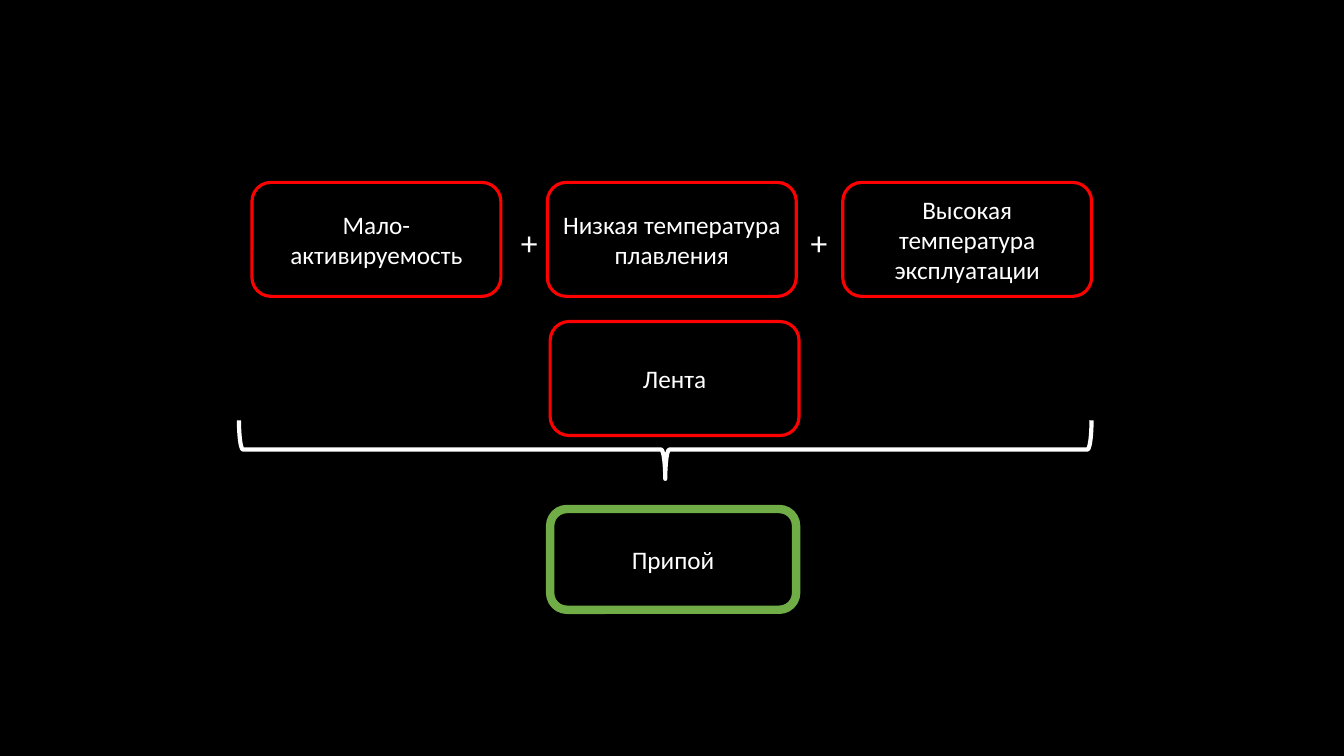
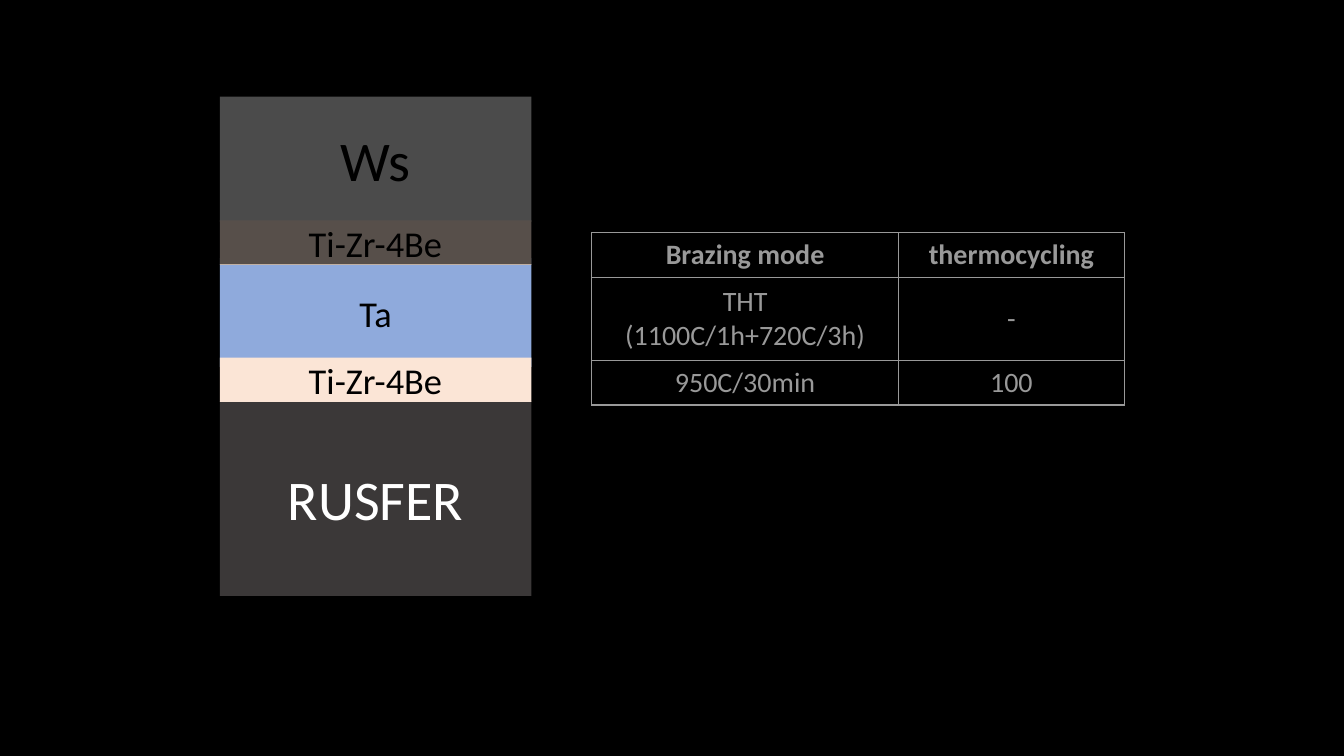
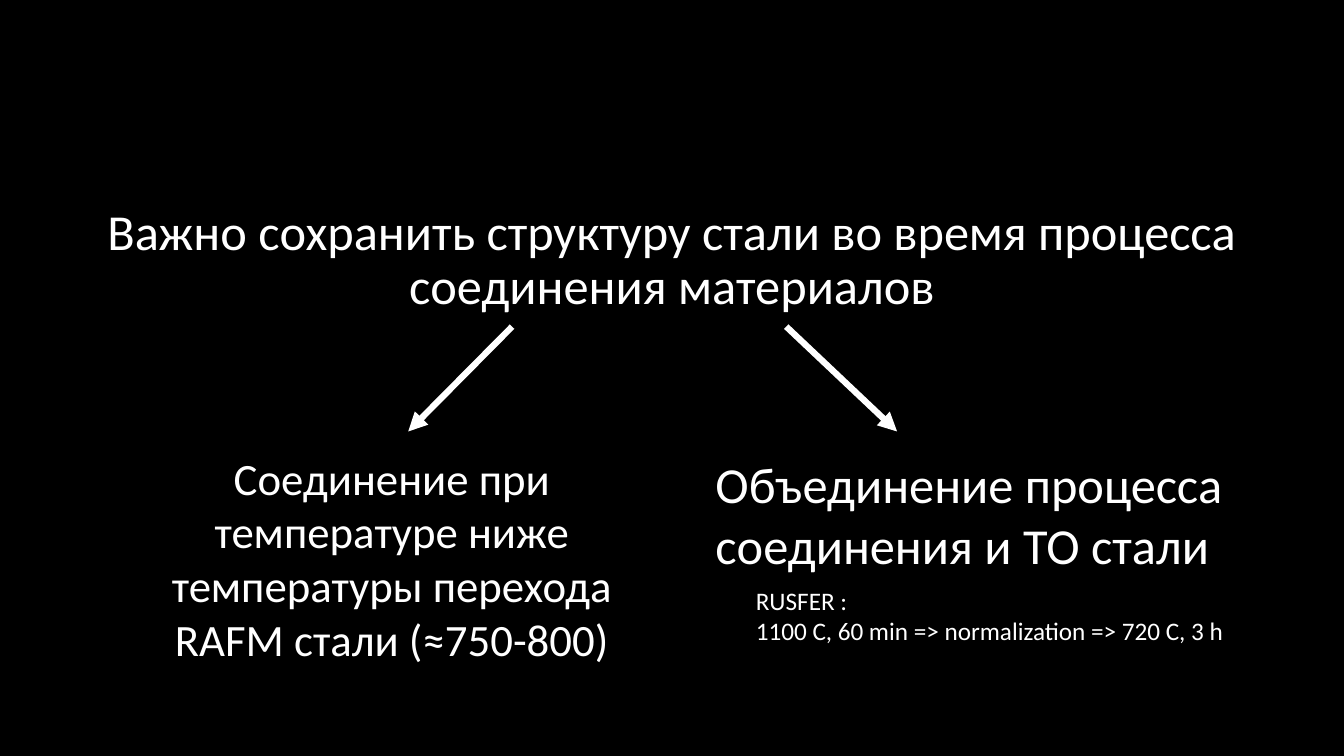
from lxml import etree
from pptx import Presentation
from pptx.dml.color import RGBColor
from pptx.enum.shapes import MSO_CONNECTOR, MSO_SHAPE
from pptx.enum.text import MSO_ANCHOR, MSO_AUTO_SIZE, PP_ALIGN
from pptx.oxml.ns import qn
from pptx.util import Pt

FONT = "Calibri"
COLORS = {
    "black": "000000", "white": "FFFFFF", "red": "FF0000", "green": "70AD47",
    "tungsten": "D9D9D9", "tantalum": "8FAADC", "steel": "3B3838", "braze": "FBE5D6",
}

# Slide 1: requirements for the solder
REQUIREMENTS = ["Мало-активируемость", "Низкая температура плавления",
                "Высокая температура эксплуатации"]
REQ_LEFT, REQ_TOP, REQ_W, REQ_H, REQ_PITCH = 180, 130.3, 177.8, 81.4, 211
PLUS_CENTERS = [378, 585]
# text, place, line colour, line width
RESULTS = [
    ("Припой", (393, 363.6, 175.7, 72), "green", 6),
    ("Лента", (393, 229.7, REQ_W, REQ_H), "red", 2.25),
]

# Slide 2: layer stack (text, top, height, fill, text colour, size) and modes
STACK_LEFT, STACK_W = 157, 222.5
LAYERS = [
    ("Ws", 69, 89.3, "tungsten", "black", 40),
    ("Ta", 184.3, 77.8, "tantalum", "black", 26),
    ("RUSFER", 286.6, 139, "steel", "white", 40),
    ("Ti-Zr-4Be", 157.5, 31.7, "braze", "black", 26),
    ("Ti-Zr-4Be", 255.5, 31.7, "braze", "black", 26),
]
MODES = [
    ("Brazing mode", "thermocycling"),
    ("THT (1100C/1h+720C/3h)", "-"),
    ("950C/30min", "100"),
]
MODE_COLS, MODE_ROWS = [219.4, 161], [32, 59, 32]
# place, opacity in percent
SHADES = [((127.5, 5.8, 265, 183), 65), ((406.8, 130.3, 410.4, 193), 40)]

# Slide 3: two ways to join
HEADLINE = "Важно сохранить структуру стали во время процесса соединения материалов"
ARROW_TOP, ARROW_BOTTOM = 233.3, 308.2
ARROWS = [(365.8, 291.6), (561.6, 640.8)]
# lines, place, size, alignment, wrap
OPTIONS = [
    (["Объединение процесса соединения и ТО стали"],
     (504, 320.4, 393.8, 94.3), 36, PP_ALIGN.LEFT, True),
    (["Соединение при температуре ниже температуры перехода RAFM стали (≈750-800)"],
     (90, 318.2, 380, 162.7), 32, PP_ALIGN.CENTER, True),
    (["RUSFER :", "1100 C, 60 min => normalization => 720 C, 3 h"],
     (532.8, 414.7, 354.2, 51), 18, PP_ALIGN.LEFT, False),
]


def rgb(name):
    return RGBColor.from_string(COLORS[name])


def points(place):
    return [Pt(v) for v in place]


def write(tf, lines, size, color="white", align=PP_ALIGN.CENTER, bold=False):
    tf.text = "\n".join(lines)
    for p in tf.paragraphs:
        p.alignment = align
        for r in p.runs:
            r.font.name, r.font.size, r.font.bold = FONT, Pt(size), bold
            r.font.color.rgb = rgb(color)


def add_box(slide, shape, place, fill=None, line=None, width=1):
    sp = slide.shapes.add_shape(shape, *points(place))
    sp.shadow.inherit = False
    if fill:
        sp.fill.solid()
        sp.fill.fore_color.rgb = rgb(fill)
    else:
        sp.fill.background()
    if line:
        sp.line.color.rgb = rgb(line)
        sp.line.width = Pt(width)
    else:
        sp.line.fill.background()
    sp.text_frame.vertical_anchor = MSO_ANCHOR.MIDDLE
    return sp


def add_text(slide, lines, place, size, align, wrap):
    tf = slide.shapes.add_textbox(*points(place)).text_frame
    tf.word_wrap = wrap
    write(tf, lines, size, align=align)


def add_arrow(slide, start, end):
    ln = slide.shapes.add_connector(MSO_CONNECTOR.STRAIGHT, *points(start + end))
    ln.line.color.rgb = rgb("white")
    ln.line.width = Pt(4.5)
    etree.SubElement(ln.line._get_or_add_ln(), qn("a:tailEnd"), type="triangle")
    etree.SubElement(ln._element.spPr, qn("a:effectLst"))


def set_opacity(sp, percent):
    color = sp.fill._xPr.find(qn("a:solidFill"))[0]
    etree.SubElement(color, qn("a:alpha"), val=str(percent * 1000))


def set_borders(cell, color, width):
    tc_pr = cell._tc.get_or_add_tcPr()
    for i, side in enumerate(("lnL", "lnR", "lnT", "lnB")):
        ln = etree.Element(qn("a:" + side), w=str(Pt(width)))
        fill = etree.SubElement(ln, qn("a:solidFill"))
        etree.SubElement(fill, qn("a:srgbClr"), val=COLORS[color])
        tc_pr.insert(i, ln)


def build_requirements(slide):
    boxes = [(text, (REQ_LEFT + i * REQ_PITCH, REQ_TOP, REQ_W, REQ_H), "red", 2.25)
             for i, text in enumerate(REQUIREMENTS)]
    for text, place, line, width in boxes + RESULTS:
        sp = add_box(slide, MSO_SHAPE.ROUNDED_RECTANGLE, place, line=line, width=width)
        write(sp.text_frame, [text], 18)
    for x in PLUS_CENTERS:
        add_text(slide, ["+"], (x - 15, 154.8, 30, 36), 24, PP_ALIGN.CENTER, False)
    brace = add_box(slide, MSO_SHAPE.LEFT_BRACE, (454.3, 16.6, 41.8, 609),
                    line="white", width=3)
    brace.rotation = 270
    brace.adjustments[0], brace.adjustments[1] = 0.07, 0.5


def build_stack(slide):
    for text, top, height, fill, color, size in LAYERS:
        sp = add_box(slide, MSO_SHAPE.RECTANGLE, (STACK_LEFT, top, STACK_W, height), fill)
        write(sp.text_frame, [text], size, color)

    # Table of brazing modes
    place = (422.6, 166.3, sum(MODE_COLS), sum(MODE_ROWS))
    table = slide.shapes.add_table(len(MODES), len(MODE_COLS), *points(place)).table
    table.first_row = table.horz_banding = False
    for col, width in zip(table.columns, MODE_COLS):
        col.width = Pt(width)
    for i, (row, height) in enumerate(zip(table.rows, MODE_ROWS)):
        row.height = Pt(height)
        for cell, text in zip(row.cells, MODES[i]):
            write(cell.text_frame, [text], 20, bold=i == 0)
            cell.vertical_anchor = MSO_ANCHOR.MIDDLE
            cell.fill.background()
            set_borders(cell, "white", 1)

    # Dimming shades
    for place, percent in SHADES:
        set_opacity(add_box(slide, MSO_SHAPE.RECTANGLE, place, "black"), percent)


def build_options(slide):
    title = slide.shapes.title
    title.left, title.top, title.width, title.height = points((66, 144, 828, 90))
    tf = title.text_frame
    tf.auto_size = MSO_AUTO_SIZE.NONE
    tf.vertical_anchor = MSO_ANCHOR.TOP
    write(tf, [HEADLINE], 36)
    tf.paragraphs[0].line_spacing = 0.9
    for x1, x2 in ARROWS:
        add_arrow(slide, (x1, ARROW_TOP), (x2, ARROW_BOTTOM))
    for option in OPTIONS:
        add_text(slide, *option)


def main():
    prs = Presentation()
    prs.slide_width, prs.slide_height = Pt(960), Pt(540)
    fill = prs.slide_master.background.fill
    fill.solid()
    fill.fore_color.rgb = rgb("black")
    title_only, blank = prs.slide_layouts[5], prs.slide_layouts[6]
    build_requirements(prs.slides.add_slide(blank))
    build_stack(prs.slides.add_slide(blank))
    build_options(prs.slides.add_slide(title_only))
    prs.save("out.pptx")


if __name__ == "__main__":
    main()
